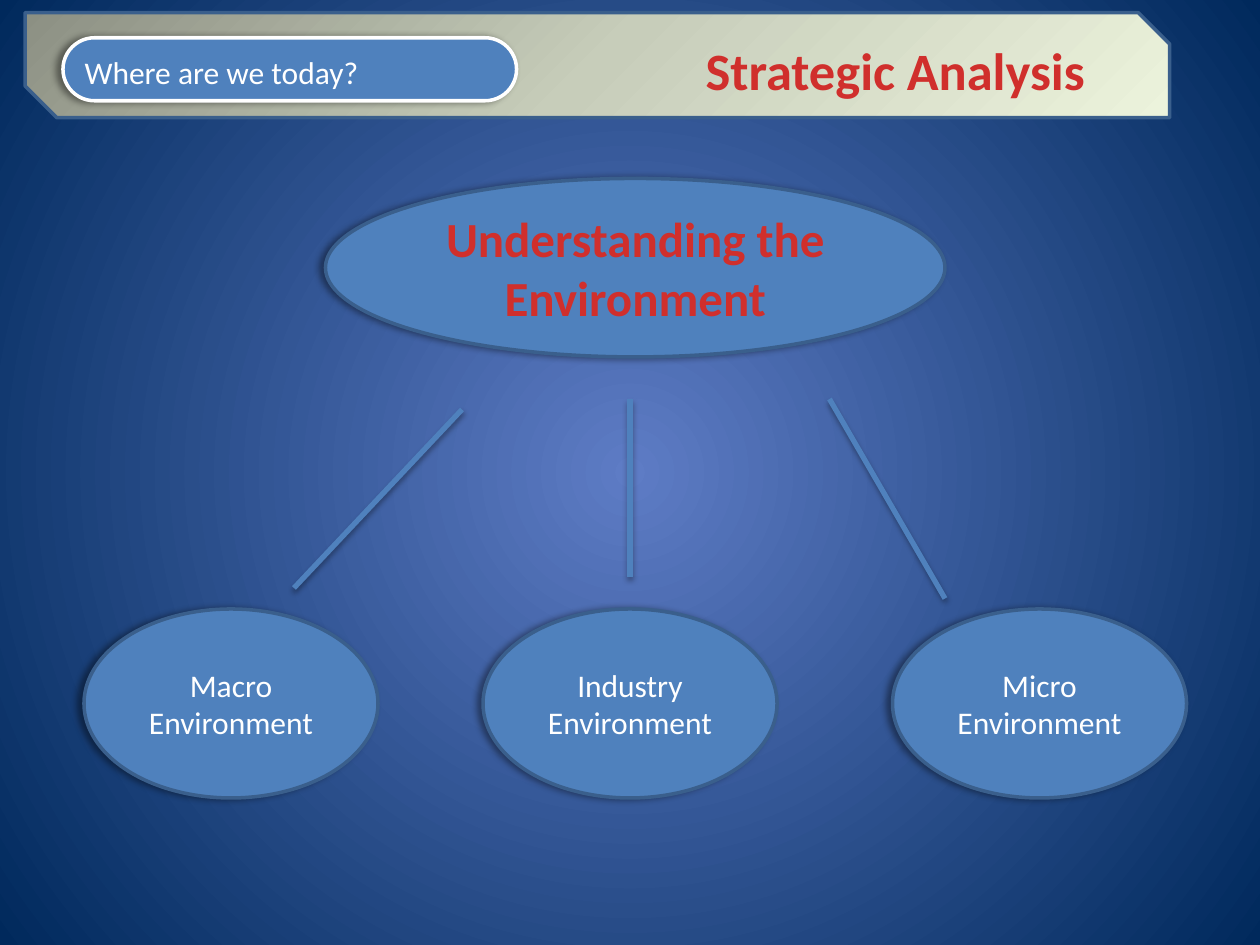
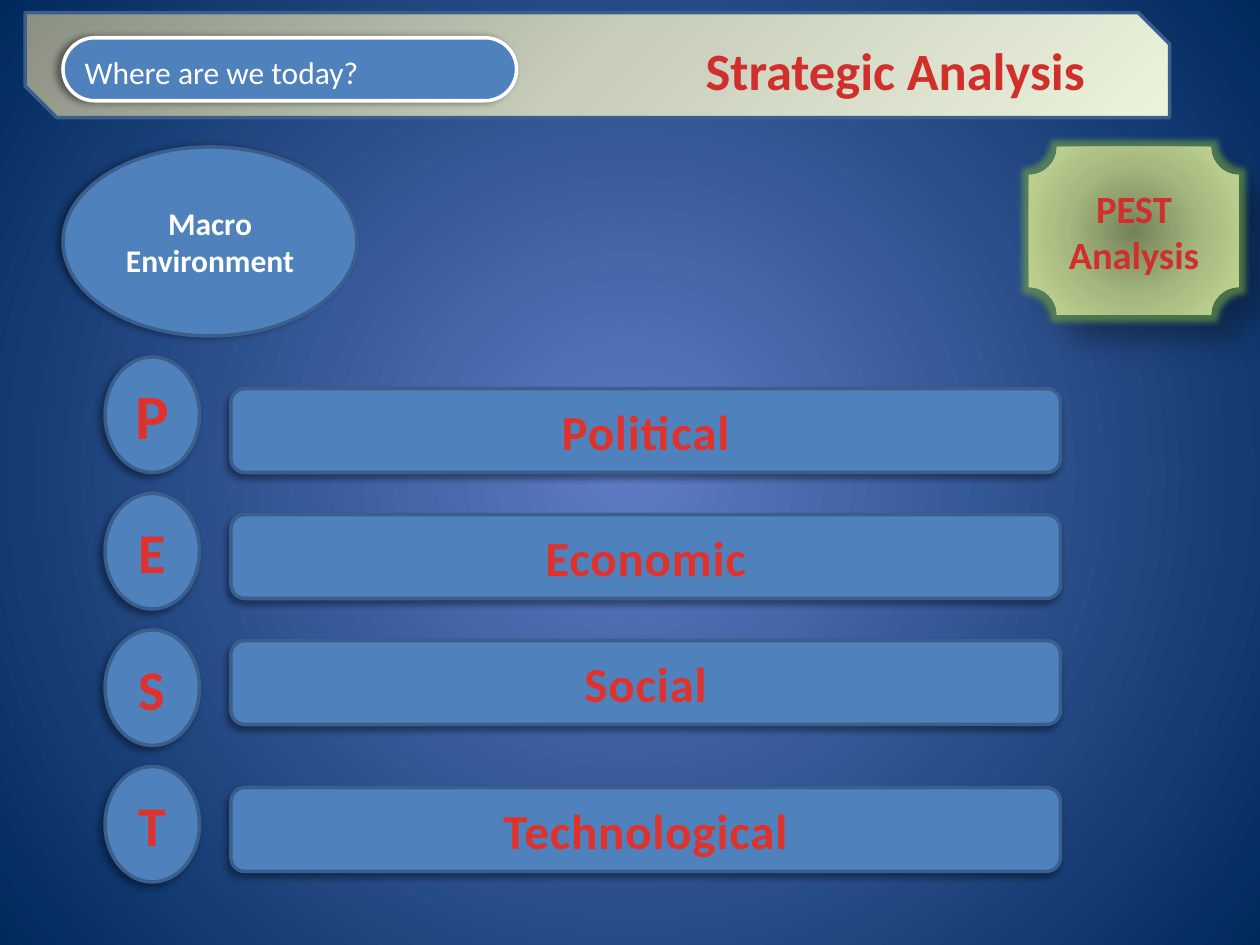
from dataclasses import dataclass
from typing import NamedTuple, Optional

from lxml.etree import SubElement
from pptx import Presentation
from pptx.dml.color import RGBColor as Rgb
from pptx.enum.shapes import MSO_CONNECTOR as Link, MSO_SHAPE as Kind
from pptx.enum.text import MSO_ANCHOR as Anchor, MSO_AUTO_SIZE as Fit, PP_ALIGN as Align
from pptx.oxml import parse_xml
from pptx.oxml.ns import nsdecls, qn
from pptx.util import Inches, Pt

COLUMNS, ROWS = 120, 90
WIDTH, HEIGHT = Inches(10), Inches(7.5)
TITLE_ONLY = 5


class Gradient(NamedTuple):
    stops: tuple[tuple[int, str], ...]
    angle: Optional[int] = None


class Shadow(NamedTuple):
    direction: int
    opacity: int = 40
    blur: float = 4
    distance: float = 3


class Glow(NamedTuple):
    color: str
    radius: float
    opacity: int


class Area(NamedTuple):
    column: float
    row: float
    columns: float
    rows: float


class Branch(NamedTuple):
    name: str
    column: float
    start: tuple[float, float]
    end: tuple[float, float]


class Factor(NamedTuple):
    name: str
    bar_row: float
    initial_size: int


@dataclass(frozen=True)
class Theme:
    font: str = "Calibri"
    blue: str = "4F81BD"
    edge: str = "3A5F8C"
    white: str = "FFFFFF"
    red: str = "D02F2C"
    bright_red: str = "E0322D"
    backdrop: Gradient = Gradient(((0, "5E7CC5"), (100, "00295C")))
    band: Gradient = Gradient(((0, "8C9083"), (50, "C7CDBA"), (100, "ECF3DC")), 45)
    plaque: Gradient = Gradient(((0, "748259"), (50, "A6B87F"), (100, "C5DB97")))
    glow: Glow = Glow("7FB040", 7, 55)
    left_shadow: Shadow = Shadow(180)
    corner_shadow: Shadow = Shadow(135)
    line_shadow: Shadow = Shadow(90, 35, 3.1, 1.8)
    plaque_shadow: Shadow = Shadow(45, 30, 15, 18)
    title_size: int = 30
    heading_size: int = 28
    plaque_size: int = 22
    body_size: int = 18


THEME = Theme()


@dataclass(frozen=True)
class Label:
    text: str
    size: int = THEME.body_size
    color: str = THEME.white
    bold: bool = False
    spacing: float = 0
    align: Align = Align.CENTER
    anchor: Anchor = Anchor.MIDDLE


@dataclass(frozen=True)
class Block:
    kind: Kind
    area: Area
    label: Optional[Label] = None
    fill: str | Gradient = THEME.blue
    edge: Optional[str] = THEME.edge
    effects: tuple[Glow | Shadow, ...] = ()
    adjustments: tuple[float, ...] = ()


BRANCHES = (
    Branch("Macro", 8, (44, 39), (28, 56)),
    Branch("Industry", 46, (60, 38), (60, 55)),
    Branch("Micro", 85, (79, 38), (90, 57)),
)
FACTORS = (
    Factor("Political", 37, 36),
    Factor("Economic", 49, 32),
    Factor("Social", 61, 32),
    Factor("Technological", 75, 32),
)


def across(columns: float) -> int:
    return round(WIDTH * columns / COLUMNS)


def down(rows: float) -> int:
    return round(HEIGHT * rows / ROWS)


def assign(target, values: dict) -> None:
    for name, value in values.items():
        setattr(target, name, value)


def place(area: Area) -> dict:
    return {
        "left": across(area.column), "top": down(area.row),
        "width": across(area.columns), "height": down(area.rows),
    }


def paint(fill, holder, color: str | Gradient) -> None:
    fill.solid()
    if isinstance(color, str):
        fill.fore_color.rgb = Rgb.from_string(color)
        return
    stops = "".join(
        f'<a:gs pos="{share * 1000}"><a:srgbClr val="{tone}"/></a:gs>'
        for share, tone in color.stops
    )
    if color.angle is None:
        course = ('<a:path path="circle"><a:fillToRect l="50000" t="50000" '
                  'r="50000" b="50000"/></a:path>')
    else:
        course = f'<a:lin ang="{color.angle * 60000}" scaled="0"/>'
    gradient = parse_xml(
        f'<a:gradFill {nsdecls("a")} rotWithShape="1"><a:gsLst>{stops}</a:gsLst>'
        f"{course}</a:gradFill>"
    )
    holder.replace(holder.find(qn("a:solidFill")), gradient)


def add_effects(properties, effects: tuple[Glow | Shadow, ...]) -> None:
    effect_list = SubElement(properties, qn("a:effectLst"))
    for effect in effects:
        if isinstance(effect, Glow):
            tag, color = "a:glow", effect.color
            settings = {"rad": Pt(effect.radius)}
        else:
            tag, color = "a:outerShdw", "000000"
            settings = {
                "blurRad": Pt(effect.blur), "dist": Pt(effect.distance),
                "dir": effect.direction * 60000, "rotWithShape": 0,
            }
        node = SubElement(effect_list, qn(tag))
        for name, value in settings.items():
            node.set(name, str(value))
        tone = SubElement(node, qn("a:srgbClr"), val=color)
        SubElement(tone, qn("a:alpha"), val=str(effect.opacity * 1000))


def write(frame, label: Label) -> None:
    assign(frame, {"word_wrap": True, "vertical_anchor": label.anchor})
    paragraph = frame.paragraphs[0]
    paragraph.alignment = label.align
    run = paragraph.add_run()
    run.text = label.text
    assign(run.font, {"name": THEME.font, "size": Pt(label.size), "bold": label.bold})
    run.font.color.rgb = Rgb.from_string(label.color)
    if label.spacing:
        run.font._element.set("spc", str(round(label.spacing * 100)))


def draw_block(slide, block: Block) -> None:
    shape = slide.shapes.add_shape(block.kind, *place(block.area).values())
    for index, value in enumerate(block.adjustments):
        shape.adjustments[index] = value
    properties = shape._element.spPr
    paint(shape.fill, properties, block.fill)
    if block.edge:
        shape.line.width = Pt(2)
        shape.line.color.rgb = Rgb.from_string(block.edge)
    else:
        shape.line.fill.background()
    add_effects(properties, block.effects)
    if block.label:
        write(shape.text_frame, block.label)


def draw_branch_line(slide, branch: Branch) -> None:
    (x1, y1), (x2, y2) = branch.start, branch.end
    link = slide.shapes.add_connector(
        Link.STRAIGHT, across(x1), down(y1), across(x2), down(y2))
    link.line.width = Pt(3)
    link.line.color.rgb = Rgb.from_string(THEME.blue)
    add_effects(link._element.spPr, (THEME.line_shadow,))


def draw_oval(slide, area: Area, label: Label) -> None:
    draw_block(slide, Block(Kind.OVAL, area, label, effects=(THEME.left_shadow,)))


def add_headed_slide(deck):
    slide = deck.slides.add_slide(deck.slide_layouts[TITLE_ONLY])
    draw_block(slide, Block(
        Kind.SNIP_2_DIAG_RECTANGLE, Area(2.4, 1.2, 109, 10),
        fill=THEME.band, adjustments=(0, 0.3)))
    title = slide.shapes.title
    slide.shapes._spTree.append(title._element)
    assign(title, place(Area(66, 3, 38.9, 7.3)))
    write(title.text_frame, Label(
        "Strategic Analysis", THEME.title_size, THEME.red, True,
        align=Align.LEFT, anchor=Anchor.TOP))
    assign(title.text_frame, {"word_wrap": False, "auto_size": Fit.SHAPE_TO_FIT_TEXT})
    draw_block(slide, Block(
        Kind.ROUNDED_RECTANGLE, Area(6, 3.6, 43.2, 6),
        Label("Where are we today?", align=Align.LEFT, anchor=Anchor.TOP),
        edge=THEME.white, effects=(THEME.left_shadow,), adjustments=(0.5,)))
    return slide


def build_environment(deck) -> None:
    slide = add_headed_slide(deck)
    draw_oval(slide, Area(31, 17, 59, 17), Label(
        "Understanding the Environment", THEME.heading_size, THEME.red, True))
    for branch in BRANCHES:
        draw_oval(slide, Area(branch.column, 58, 28, 18),
                  Label(f"{branch.name} Environment"))
        draw_branch_line(slide, branch)


def build_pest(deck) -> None:
    slide = add_headed_slide(deck)
    draw_oval(slide, Area(6, 14, 28, 18), Label("Macro Environment", bold=True))
    draw_block(slide, Block(
        Kind.PLAQUE, Area(98, 14, 20, 16),
        Label("PEST Analysis", THEME.plaque_size, THEME.red, True),
        THEME.plaque, None, (THEME.glow, THEME.plaque_shadow)))
    for index, factor in enumerate(FACTORS):
        parts = (
            (Kind.OVAL, Area(10, 34 + 13 * index, 9, 11),
             factor.name[0], factor.initial_size),
            (Kind.ROUNDED_RECTANGLE, Area(22, factor.bar_row, 79, 8),
             factor.name, THEME.heading_size),
        )
        for kind, area, text, size in parts:
            draw_block(slide, Block(
                kind, area, Label(text, size, THEME.bright_red, True, 0.5),
                effects=(THEME.corner_shadow,)))


def main() -> None:
    deck = Presentation()
    assign(deck, {"slide_width": WIDTH, "slide_height": HEIGHT})
    master = deck.slide_master
    fill = master.background.fill
    fill.solid()
    paint(fill, master._element.find(f".//{qn('p:bgPr')}"), THEME.backdrop)
    build_environment(deck)
    build_pest(deck)
    deck.save("out.pptx")


if __name__ == "__main__":
    main()
